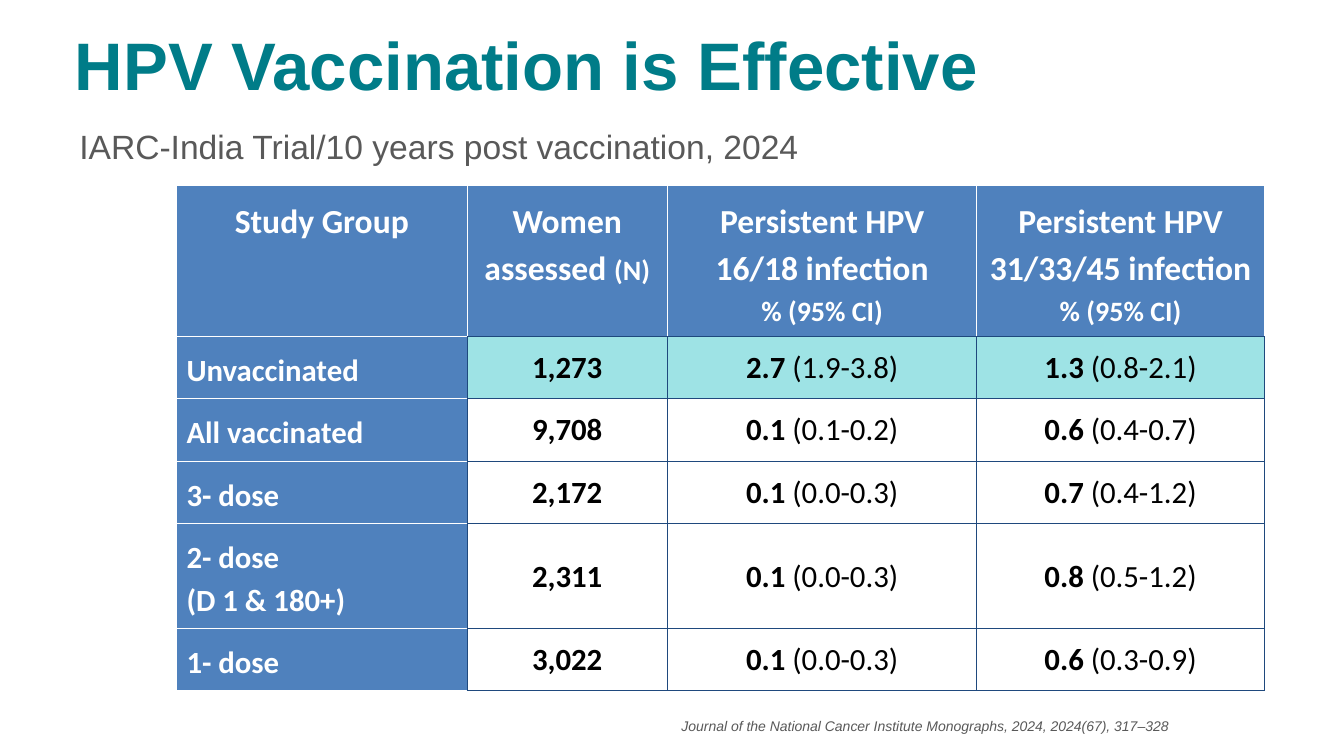
from dataclasses import dataclass

from lxml import etree
from pptx import Presentation
from pptx.dml.color import RGBColor
from pptx.enum import text
from pptx.oxml import ns
from pptx.util import Cm, Pt

TEAL, GREY, WHITE, BLACK = "007C88", "595959", "FFFFFF", "000000"
BLUE, NAVY, AQUA = "4F81BD", "1F497D", "9EE3E5"
CENTER, LEFT, RIGHT = text.PP_ALIGN.CENTER, text.PP_ALIGN.LEFT, text.PP_ALIGN.RIGHT
MARGIN = Cm(0.25)
COLUMN_WIDTHS = (7.32, 5.05, 7.8, 7.24)
HEADER_HEIGHT, ROW_HEIGHT = 3.66, 1.5


@dataclass
class Run:
    text: str
    size: float
    bold: bool = True


@dataclass
class StudyGroup:
    names: tuple[str, ...]
    women: str
    hpv_16_18: tuple[str, str]
    hpv_31_33_45: tuple[str, str]
    fill: str = WHITE
    anchor: text.MSO_ANCHOR = text.MSO_ANCHOR.TOP


HEADERS = (
    ((Run("Study Group", 24),),),
    ((Run("Women assessed ", 24), Run("(N)", 20)),),
    ((Run("Persistent HPV 16/18 infection", 24),), (Run("% (95% CI)", 20),)),
    ((Run("Persistent HPV 31/33/45 infection", 24),), (Run("% (95% CI)", 20),)),
)
GROUPS = (
    StudyGroup(("Unvaccinated",), "1,273", ("2.7", "(1.9-3.8)"), ("1.3", "(0.8-2.1)"), AQUA),
    StudyGroup(("All vaccinated",), "9,708", ("0.1", "(0.1-0.2)"), ("0.6", "(0.4-0.7)")),
    StudyGroup(("3- dose",), "2,172", ("0.1", "(0.0-0.3)"), ("0.7", "(0.4-1.2)")),
    StudyGroup(("2- dose", "(D 1 & 180+)"), "2,311", ("0.1", "(0.0-0.3)"),
               ("0.8", "(0.5-1.2)"), anchor=text.MSO_ANCHOR.MIDDLE),
    StudyGroup(("1- dose",), "3,022", ("0.1", "(0.0-0.3)"), ("0.6", "(0.3-0.9)")),
)


def color(value: str) -> RGBColor:
    return RGBColor.from_string(value)


def style_font(font, size: float, value: str, name: str = "Arial") -> None:
    font.name, font.size = name, Pt(size)
    font.color.rgb = color(value)


def place(shape, left: float, top: float, width: float, height: float) -> None:
    shape.left, shape.top = Cm(left), Cm(top)
    shape.width, shape.height = Cm(width), Cm(height)


def add_label(slide, content: str, box: tuple[float, ...], size: float):
    shape = slide.shapes.add_textbox(*map(Cm, box))
    shape.text_frame.word_wrap = True
    paragraph = shape.text_frame.paragraphs[0]
    paragraph.text = content
    style_font(paragraph.font, size, GREY)
    return shape


def set_borders(cell, row: int, column: int) -> None:
    """White lines around the headings, navy wherever a value cell is touched."""
    is_value = row > 0 and column > 0
    edges = {
        "lnL": is_value,
        "lnR": row > 0,
        "lnT": is_value,
        "lnB": column > 0,
    }
    properties = cell._tc.get_or_add_tcPr()
    for position, (tag, is_navy) in enumerate(edges.items()):
        line = etree.Element(ns.qn(f"a:{tag}"), w=str(Pt(0.75)))
        fill = etree.SubElement(line, ns.qn("a:solidFill"))
        etree.SubElement(fill, ns.qn("a:srgbClr"), val=NAVY if is_navy else WHITE)
        properties.insert(position, line)


def fill_cell(cell, lines, fill: str, ink: str, alignment, spacing: float) -> None:
    cell.fill.solid()
    cell.fill.fore_color.rgb = color(fill)
    cell.margin_left = cell.margin_right = cell.margin_top = cell.margin_bottom = MARGIN
    frame = cell.text_frame
    for index, runs in enumerate(lines):
        paragraph = frame.add_paragraph() if index else frame.paragraphs[0]
        paragraph.alignment, paragraph.line_spacing = alignment, spacing
        for item in runs:
            run = paragraph.add_run()
            run.text = item.text
            style_font(run.font, item.size, ink, "Calibri")
            run.font.bold = item.bold


def add_results(slide) -> None:
    height = HEADER_HEIGHT + ROW_HEIGHT * len(GROUPS)
    table = slide.shapes.add_table(
        len(GROUPS) + 1, len(HEADERS), Cm(4.45), Cm(4.67), Cm(sum(COLUMN_WIDTHS)), Cm(height)
    ).table
    for column, width in zip(table.columns, COLUMN_WIDTHS):
        column.width = Cm(width)
    for index, row in enumerate(table.rows):
        row.height = Cm(ROW_HEIGHT if index else HEADER_HEIGHT)

    for column, lines in enumerate(HEADERS):
        fill_cell(table.cell(0, column), lines, BLUE, WHITE, CENTER, 1.15)
    for row, group in enumerate(GROUPS, 1):
        names = [(Run(name, 22),) for name in group.names]
        fill_cell(table.cell(row, 0), names, BLUE, WHITE, LEFT, 1.15)
        values = [(Run(group.women, 22),)]
        for rate, interval in (group.hpv_16_18, group.hpv_31_33_45):
            values.append((Run(f"{rate} ", 22), Run(interval, 22, False)))
        for column, runs in enumerate(values, 1):
            cell = table.cell(row, column)
            fill_cell(cell, [runs], group.fill, BLACK, CENTER, 1.07)
            cell.vertical_anchor = group.anchor

    for row in range(len(table.rows)):
        for column in range(len(table.columns)):
            set_borders(table.cell(row, column), row, column)


def main() -> None:
    presentation = Presentation()
    presentation.slide_width, presentation.slide_height = Cm(33.87), Cm(19.05)
    slide = presentation.slides.add_slide(presentation.slide_layouts[5])

    # Title
    title = slide.shapes.title
    place(title, 1.63, 0.69, 26.7, 2.16)
    title.text_frame.text = "HPV Vaccination is Effective"
    title.text_frame.auto_size = text.MSO_AUTO_SIZE.NONE
    title.text_frame.vertical_anchor = text.MSO_ANCHOR.TOP
    heading = title.text_frame.paragraphs[0]
    heading.alignment, heading.line_spacing = LEFT, 0.9
    style_font(heading.font, 48, TEAL)
    heading.font.bold = True

    # Subtitle
    add_label(slide, "IARC-India Trial/10 years post vaccination, 2024", (1.75, 3.05, 19.79, 1.63), 24)

    # Trial results
    add_results(slide)

    # Citation
    citation = add_label(
        slide,
        "Journal of the National Cancer Institute Monographs, 2024, 2024(67), 317–328",
        (1.75, 17.86, 27.94, 0.94),
        10,
    )
    citation.text_frame.margin_top = citation.text_frame.margin_bottom = MARGIN
    paragraph = citation.text_frame.paragraphs[0]
    paragraph.alignment = RIGHT
    paragraph.font.italic = True

    presentation.save("out.pptx")


if __name__ == "__main__":
    main()
